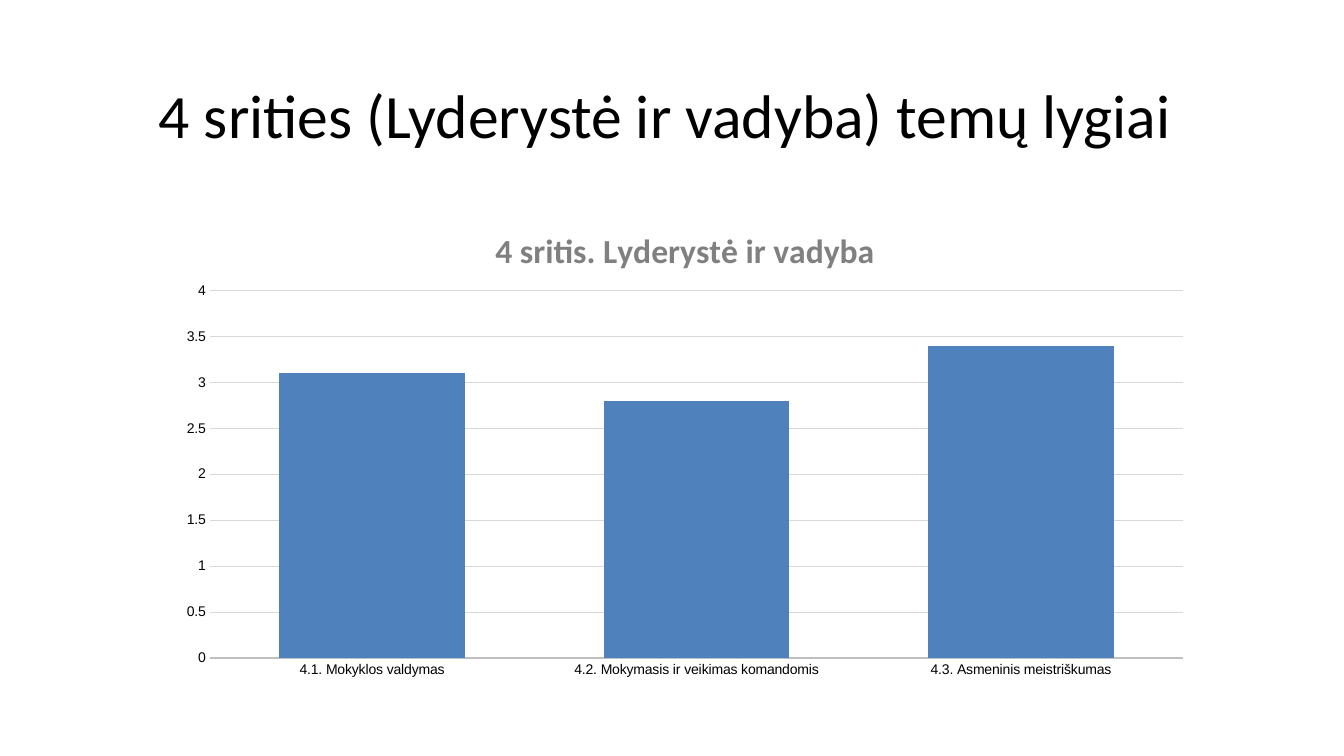
from pptx import Presentation
from pptx.chart.data import CategoryChartData
from pptx.dml.color import RGBColor
from pptx.enum.chart import XL_CHART_TYPE as ChartType, XL_TICK_MARK as TickMark
from pptx.enum.text import MSO_ANCHOR as Anchor, PP_ALIGN as Align
from pptx.oxml import parse_xml
from pptx.oxml.ns import nsdecls, qn
from pptx.util import Inches, Pt

BLACK = RGBColor(0x00, 0x00, 0x00)
TITLE_GREY = RGBColor(0x80, 0x80, 0x80)
AXIS_GREY = RGBColor(0xBF, 0xBF, 0xBF)
GRID_GREY = RGBColor(0xD9, 0xD9, 0xD9)
BAR_BLUE = RGBColor(0x4F, 0x81, 0xBD)

TOPIC_LEVELS = {
    "4.1. Mokyklos valdymas": 3.1,
    "4.2. Mokymasis ir veikimas komandomis": 2.8,
    "4.3. Asmeninis meistriškumas": 3.4,
}


def set_format(target, values):
    for name, value in values.items():
        setattr(target, name, value)


def style_font(font, face, size, color, bold=False):
    set_format(font, {"name": face, "size": Pt(size), "bold": bold})
    font.color.rgb = color


def style_line(line, color, width):
    line.color.rgb = color
    line.width = Pt(width)


def set_layout(parent, **fractions):
    """Place a chart part by fractions of the chart's size."""
    previous = parent.find(qn("c:layout"))
    position = 0
    if previous is not None:
        position = parent.index(previous)
        parent.remove(previous)
    target = '<c:layoutTarget val="inner"/>' if "w" in fractions else ""
    modes = '<c:xMode val="edge"/><c:yMode val="edge"/>'
    places = "".join(f'<c:{key} val="{value}"/>' for key, value in fractions.items())
    parent.insert(position, parse_xml(
        f'<c:layout {nsdecls("c")}><c:manualLayout>{target}{modes}{places}'
        '</c:manualLayout></c:layout>'))


def add_title(slide, text):
    title = slide.shapes.title
    set_format(title, {"left": Inches(0.92), "top": Inches(0.4),
                       "width": Inches(11.5), "height": Inches(1.45)})
    frame = title.text_frame
    frame.text = text
    frame.vertical_anchor = Anchor.MIDDLE
    paragraph = frame.paragraphs[0]
    paragraph.alignment = Align.CENTER
    style_font(paragraph.runs[0].font, "Calibri", 44, BLACK)


def style_chart_title(chart, text):
    chart_title = chart.chart_title
    chart_title.text_frame.text = text
    run = chart_title.text_frame.paragraphs[0].runs[0]
    style_font(run.font, "Calibri", 24, TITLE_GREY, bold=True)
    title_xml = chart._chartSpace.chart.find(qn("c:title"))
    title_xml.find(qn("c:overlay")).set("val", "1")
    set_layout(title_xml, x=0.31, y=0.05)


def style_axes(chart):
    no_ticks = {"major_tick_mark": TickMark.NONE, "minor_tick_mark": TickMark.NONE}
    topics, levels = chart.category_axis, chart.value_axis
    set_format(topics, no_ticks)
    style_line(topics.format.line, AXIS_GREY, 1.5)
    set_format(levels, {**no_ticks, "minimum_scale": 0, "maximum_scale": 4,
                        "major_unit": 0.5, "has_major_gridlines": True})
    levels.format.line.fill.background()
    style_line(levels.major_gridlines.format.line, GRID_GREY, 0.5)


def add_level_chart(slide, heading, topic_levels):
    data = CategoryChartData()
    data.categories = list(topic_levels)
    data.add_series("Series 1", list(topic_levels.values()))
    chart = slide.shapes.add_chart(
        ChartType.COLUMN_CLUSTERED, Inches(1.67), Inches(1.96),
        Inches(10.27), Inches(4.86), data).chart
    chart.has_legend = False
    style_font(chart.font, "Arial", 10, BLACK)
    style_chart_title(chart, heading)
    style_axes(chart)

    plot = chart.plots[0]
    set_format(plot, {"gap_width": 75, "vary_by_categories": False})
    bar_fill = plot.series[0].format.fill
    bar_fill.solid()
    bar_fill.fore_color.rgb = BAR_BLUE
    set_layout(chart._chartSpace.chart.plotArea, x=0.04, y=0.19, w=0.94, h=0.75)


def main():
    deck = Presentation()
    set_format(deck, {"slide_width": Inches(13.33), "slide_height": Inches(7.5)})
    slide = deck.slides.add_slide(deck.slide_layouts.get_by_name("Title Only"))
    add_title(slide, "4 srities (Lyderystė ir vadyba) temų lygiai ")
    add_level_chart(slide, "4 sritis. Lyderystė ir vadyba", TOPIC_LEVELS)
    deck.save("out.pptx")


if __name__ == "__main__":
    main()
